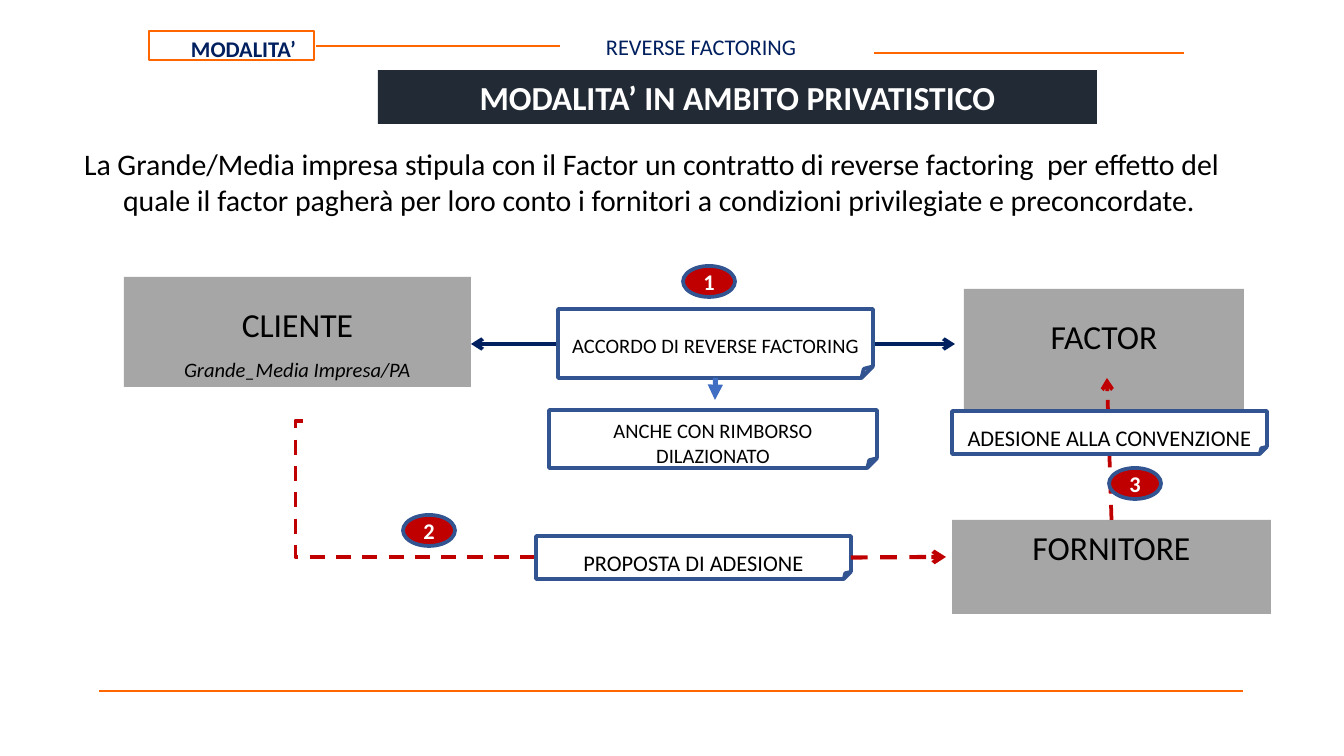
from dataclasses import dataclass
from pptx import Presentation
from pptx.dml.color import RGBColor
from pptx.enum.dml import MSO_LINE
from pptx.enum.shapes import MSO_CONNECTOR, MSO_SHAPE
from pptx.enum.text import MSO_ANCHOR, PP_ALIGN
from pptx.oxml.ns import qn
from pptx.util import Pt
from lxml import etree

RECT, OVAL, NOTE = MSO_SHAPE.RECTANGLE, MSO_SHAPE.OVAL, MSO_SHAPE.FOLDED_CORNER
STRAIGHT, ELBOW = MSO_CONNECTOR.STRAIGHT, MSO_CONNECTOR.ELBOW
LEFT, CENTER = PP_ALIGN.LEFT, PP_ALIGN.CENTER
TOP, MIDDLE = MSO_ANCHOR.TOP, MSO_ANCHOR.MIDDLE
DASH = MSO_LINE.DASH
TOP_SIDE, BOTTOM_SIDE, RIGHT_SIDE = 0, 2, 3


@dataclass(frozen=True)
class Theme:
    font: str = "Calibri"
    white: str = "FFFFFF"
    black: str = "000000"
    dark: str = "222A35"
    navy: str = "001F5F"
    orange: str = "FF6600"
    gray: str = "A6A6A6"
    edge: str = "325491"
    blue: str = "3F6EC2"
    deal: str = "002060"
    red: str = "C00000"
    big: int = 18
    body: int = 16
    label: int = 12
    small: int = 11


T = Theme()

# Content: boxes are left, top, width, height in px
TITLE = "MODALITA’ IN AMBITO PRIVATISTICO"
TAG = "MODALITA’"
TOPIC = "REVERSE FACTORING"
INTRO = ("La Grande/Media impresa stipula con il Factor un contratto di reverse "
         "factoring  per effetto del quale il factor pagherà per loro conto i "
         "fornitori a condizioni privilegiate e preconcordate.")
PARTIES = {
    "client": ((124, 277, 347, 110), 1.5,
               [("CLIENTE", T.big, False), ("Grande_Media Impresa/PA", T.small, True)]),
    "factor": ((964, 289, 280, 134), 1.5, [("FACTOR", T.big, False)]),
    "vendor": ((952, 520, 319, 94), 1, [("FORNITORE", T.big, False)]),
}
# Notes: box, text, size, room above the text
NOTES = {
    "deal": ((558, 309, 315, 69), "ACCORDO DI REVERSE FACTORING", T.small, 24),
    "delay": ((549, 410, 328, 58), "ANCHE CON RIMBORSO DILAZIONATO", T.small, 8),
    "offer": ((536, 536, 315, 43), "PROPOSTA DI ADESIONE", T.label, 13),
    "join": ((952, 411, 315, 43), "ADESIONE ALLA CONVENZIONE", T.label, 13),
}
STEPS = [("1", 683, 266), ("2", 403, 515), ("3", 1109, 468)]
RULES = [((316, 46), (560, 46), 1.19), ((874, 53), (1184, 53), 1.19),
         ((99, 691), (1243, 691), 1.5)]

SCALE = 914400 / 134.4


def px(n):
    return round(n * SCALE)


def tint(code):
    return RGBColor.from_string(code)


prs = Presentation()
prs.slide_width, prs.slide_height = px(1344), px(756)
slide = prs.slides.add_slide(prs.slide_layouts[6])
shapes = slide.shapes


def write(shape, rows, size=T.label, color=T.black, bold=False, align=CENTER,
          anchor=TOP, inset=(13, 7, 13, 7), space=1):
    """Rows are (text, size, italic) tuples, or one plain string."""
    if isinstance(rows, str):
        rows = [(rows, size, False)]
    frame = shape.text_frame
    frame.word_wrap, frame.vertical_anchor = True, anchor
    (frame.margin_left, frame.margin_top,
     frame.margin_right, frame.margin_bottom) = map(px, inset)
    for i, (text, points, italic) in enumerate(rows):
        para = frame.add_paragraph() if i else frame.paragraphs[0]
        para.alignment, para.line_spacing = align, space
        run = para.add_run()
        run.text = text
        font = run.font
        font.name, font.size = T.font, Pt(points)
        font.bold, font.italic = bold, italic
        font.color.rgb = tint(color)
    return shape


def block(kind, box, fill=None, edge=None, width=2):
    shape = shapes.add_shape(kind, *map(px, box))
    shape.shadow.inherit = False
    if fill:
        shape.fill.solid()
        shape.fill.fore_color.rgb = tint(fill)
    else:
        shape.fill.background()
    if edge:
        shape.line.color.rgb = tint(edge)
        shape.line.width = Pt(width)
    else:
        shape.line.fill.background()
    return shape


def link(start, end, color, width=2, kind=STRAIGHT, dash=None, head=None, tail=None):
    wire = shapes.add_connector(kind, *map(px, start + end))
    wire.line.color.rgb = tint(color)
    wire.line.width = Pt(width)
    if dash:
        wire.line.dash_style = dash
    props = wire.line._get_or_add_ln()
    for name, tip in (("a:headEnd", head), ("a:tailEnd", tail)):
        if tip:
            etree.SubElement(props, qn(name), type=tip)
    etree.SubElement(wire._element.spPr, qn("a:effectLst"))
    return wire


def note(name):
    box, text, size, room = NOTES[name]
    shape = block(NOTE, box, T.white, T.edge)
    return write(shape, text, size=size, inset=(13, room, 13, 0))


# Header and footer
for start, end, width in RULES:
    link(start, end, T.orange, width)
write(block(RECT, (378, 70, 719, 54), T.dark), TITLE, size=T.big, color=T.white, bold=True)
write(block(RECT, (149, 31, 165, 29), edge=T.orange, width=1.19), TAG,
      color=T.navy, bold=True, inset=(24, 4, 0, 0))
write(shapes.add_textbox(*map(px, (605, 31, 225, 55))), TOPIC,
      color=T.navy, align=LEFT, inset=(1, 2, 0, 0))

# Introduction with a hanging indent
intro = write(block(RECT, (44, 132, 1243, 101), T.white), INTRO,
              size=T.body, align=LEFT, inset=(13, 14, 13, 0))
indent = intro.text_frame.paragraphs[0]._p.get_or_add_pPr()
indent.set("marL", str(px(66)))
indent.set("indent", str(px(-39)))

# Parties
party = {name: write(block(RECT, box, T.gray), rows, space=space)
         for name, (box, space, rows) in PARTIES.items()}

# Links that run behind the notes
link((471, 344), (955, 344), T.deal, head="arrow", tail="arrow")
bend = link((303, 421), (748, 557), T.red, kind=ELBOW, dash=DASH)
shape_form = bend._element.spPr.find(qn("a:prstGeom"))
guides = shape_form.find(qn("a:avLst"))
if guides is None:
    guides = etree.SubElement(shape_form, qn("a:avLst"))
etree.SubElement(guides, qn("a:gd"), name="adj1", fmla="val -1700")
rise = link((1111, 520), (1107, 378), T.red, dash=DASH, tail="arrow")
rise.begin_connect(party["vendor"], TOP_SIDE)

# Notes and the links that leave them
notes = {name: note(name) for name in NOTES}
drop = link((715, 378), (715, 400), T.blue, 2.75, tail="triangle")
drop.begin_connect(notes["deal"], BOTTOM_SIDE)
send = link((851, 557), (946, 557), T.red, 2.25, dash=DASH, tail="arrow")
send.begin_connect(notes["offer"], RIGHT_SIDE)

# Step numbers
for text, left, top in STEPS:
    write(block(OVAL, (left, top, 52, 31), T.red, T.edge), text,
          color=T.white, bold=True, anchor=MIDDLE, inset=(0, 0, 0, 0))

prs.save("out.pptx")
